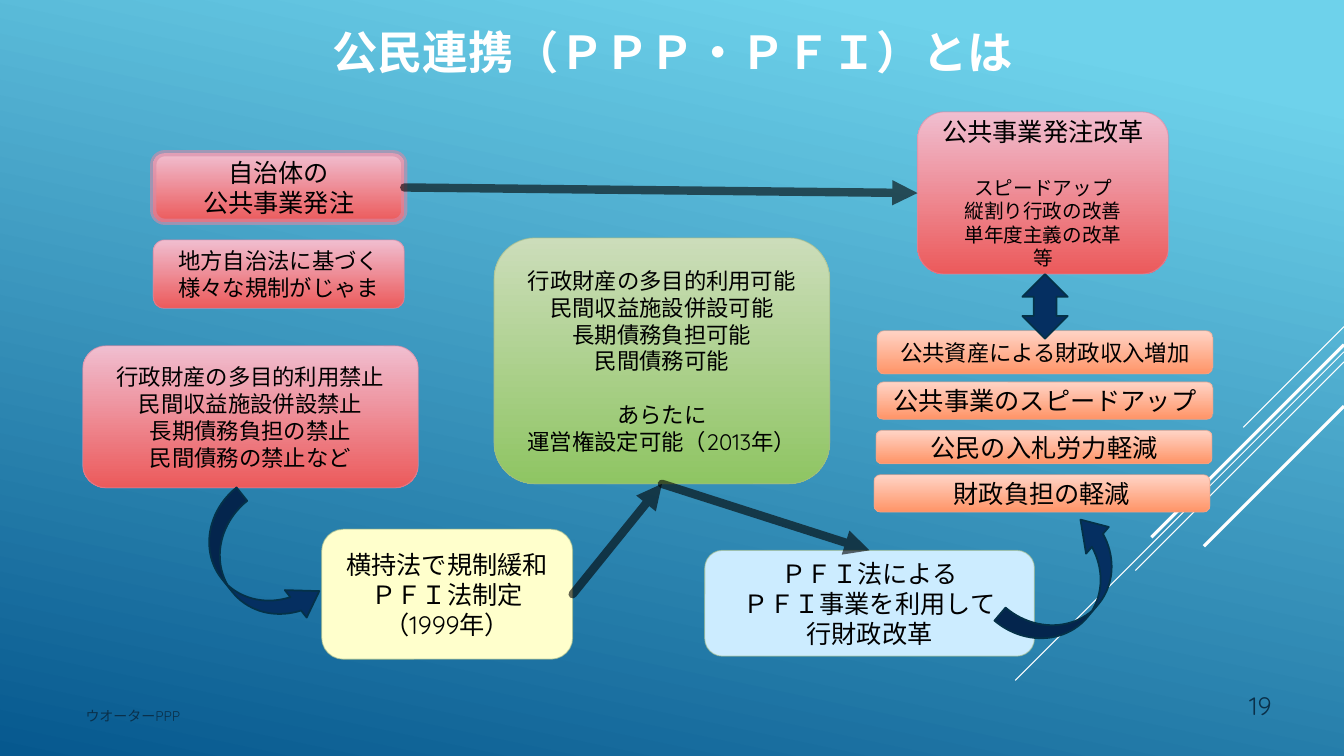
from pptx import Presentation
from pptx.dml.color import RGBColor
from pptx.enum.shapes import MSO_CONNECTOR, MSO_SHAPE
from pptx.enum.text import MSO_ANCHOR, PP_ALIGN
from pptx.oxml.ns import qn
from pptx.util import Inches, Pt
from lxml import etree

ROUND = MSO_SHAPE.ROUNDED_RECTANGLE
CURVE = MSO_SHAPE.CURVED_UP_ARROW
UPDOWN = MSO_SHAPE.UP_DOWN_ARROW
STRAIGHT = MSO_CONNECTOR.STRAIGHT
MIDDLE, TOP, BOTTOM = MSO_ANCHOR.MIDDLE, MSO_ANCHOR.TOP, MSO_ANCHOR.BOTTOM
LEFT, CENTER, RIGHT = PP_ALIGN.LEFT, PP_ALIGN.CENTER, PP_ALIGN.RIGHT

WHITE = RGBColor(0xFF, 0xFF, 0xFF)
BLACK = RGBColor(0, 0, 0)
NAVY = RGBColor(0x05, 0x2F, 0x61)
EDGE = RGBColor(0x04, 0x31, 0x48)
INK = RGBColor(0x0A, 0x30, 0x4A)
SKY = RGBColor(0x6E, 0xD2, 0xEB)
DEEP = RGBColor(0x06, 0x58, 0x8E)
SAGE = RGBColor(0xA4, 0xBB, 0x8B)

# Each look: fill colours (one, or two for a gradient), then the line colour
RED = ([RGBColor(0xF0, 0xBE, 0xD0), RGBColor(0xEC, 0x5A, 0x5B)], RGBColor(0xD6, 0x8B, 0xA6))
GREEN = ([RGBColor(0xCC, 0xDD, 0xBA), RGBColor(0x8F, 0xC5, 0x63)], SAGE)
PEACH = ([RGBColor(0xFF, 0xD4, 0xC6), RGBColor(0xFF, 0x94, 0x67)], RGBColor(0xEE, 0xA7, 0x8F))
CREAM = ([RGBColor(0xFF, 0xFF, 0xCC)], SAGE)
PALE = ([RGBColor(0xCC, 0xEC, 0xFF)], SAGE)


class Board:
    font = "Quicksand"

    def __init__(self, deck):
        self.slide = deck.slides.add_slide(deck.slide_layouts[5])
        self.shapes = self.slide.shapes

    def blend(self, fill, colors, angle, start=0):
        fill.gradient()
        fill.gradient_angle = angle
        for stop, color, pos in zip(fill.gradient_stops, colors, (start, 1)):
            stop.color.rgb = color
            stop.position = pos

    def fade(self, shape):
        """Make a shape's line 60 % opaque and return its XML."""
        pen = shape._element.spPr.find(qn("a:ln"))
        color = pen.find(".//" + qn("a:srgbClr"))
        etree.SubElement(color, qn("a:alpha")).set("val", "60000")
        return pen

    def style(self, frame, text, size, color=BLACK, align=CENTER, anchor=MIDDLE, bold=False):
        """Set a frame's text and format its runs."""
        frame.text = text
        frame.word_wrap = True
        frame.vertical_anchor = anchor
        for par in frame.paragraphs:
            par.alignment = align
            for run in par.runs:
                run.font.name = self.font
                run.font.size = Pt(size)
                run.font.color.rgb = color
                run.font.bold = bold

    def title(self, text, *area):
        head = self.shapes.title
        head.left, head.top, head.width, head.height = map(Inches, area)
        self.style(head.text_frame, text, 32.4, WHITE, bold=True)

    def label(self, text, area, size, align, anchor):
        box = self.shapes.add_textbox(*map(Inches, area))
        self.style(box.text_frame, text, size, INK, align, anchor)

    def box(self, text, area, look, size, width=0.75):
        card = self.shapes.add_shape(ROUND, *map(Inches, area))
        card.shadow.inherit = False
        colors, edge = look
        if len(colors) > 1:
            self.blend(card.fill, colors, 270)
        else:
            card.fill.solid()
            card.fill.fore_color.rgb = colors[0]
        card.line.color.rgb = edge
        card.line.width = Pt(width)
        self.fade(card)
        self.style(card.text_frame, text, size)
        return card

    def arrow(self, kind, area, bends, turn=0):
        mark = self.shapes.add_shape(kind, *map(Inches, area))
        mark.shadow.inherit = False
        mark.rotation = turn
        for i, bend in enumerate(bends):
            mark.adjustments[i] = bend
        mark.fill.solid()
        mark.fill.fore_color.rgb = NAVY
        mark.line.color.rgb = EDGE
        mark.line.width = Pt(1.25)

    def line(self, ends, color, width):
        link = self.shapes.add_connector(STRAIGHT, *map(Inches, ends))
        link.line.color.rgb = color
        link.line.width = Pt(width)
        etree.SubElement(link._element.spPr, qn("a:effectLst"))
        return link

    def join(self, start, side, goal, port):
        """Draw a thick arrow between the sides of two boxes."""
        link = self.line((0, 0, 1, 1), BLACK, 6)
        link.begin_connect(start, side)
        link.end_connect(goal, port)
        pen = self.fade(link)
        pen.set("cap", "rnd")
        etree.SubElement(pen, qn("a:tailEnd")).set("type", "triangle")


def main():
    deck = Presentation()
    deck.slide_width, deck.slide_height = Inches(13.33), Inches(7.5)
    board = Board(deck)
    board.blend(board.slide.background.fill, (SKY, DEEP), 258, 0.1)

    # Diagonal rays from the right edge: start height, run, width
    for top, run, width in ((3.24, 1, 0.75), (3.49, 3.26, 0.75), (3.59, 2.07, 0.75),
                            (3.42, 1.91, 2.25), (4.03, 1.39, 2.25)):
        board.line((13.33, top, 13.33 - run, top + run), WHITE, width)

    board.title("公民連携（ＰＰＰ・ＰＦＩ）とは", 2.31, 0.21, 8.72, 0.6)

    order = board.box("自治体の\n公共事業発注", (1.52, 1.52, 2.49, 0.68), RED, 18, 4.5)
    board.box("地方自治法に基づく\n様々な規制がじゃま", (1.52, 2.38, 2.49, 0.68), RED, 16)
    board.box("行政財産の多目的利用禁止\n民間収益施設併設禁止\n長期債務負担の禁止\n民間債務の禁止など",
              (0.82, 3.43, 3.33, 1.41), RED, 16)
    law = board.box("横持法で規制緩和\nＰＦＩ法制定\n（1999年）", (3.19, 5.25, 2.49, 1.29), CREAM, 18)
    gain = board.box("行政財産の多目的利用可能\n民間収益施設併設可能\n長期債務負担可能\n民間債務可能\n"
                     "あらたに\n運営権設定可能（2013年）", (4.9, 2.36, 3.33, 2.44), GREEN, 16)
    gain.text_frame.paragraphs[4].space_before = Pt(19)
    plan = board.box("ＰＦＩ法による\nＰＦＩ事業を利用して\n行財政改革", (6.99, 5.46, 3.27, 1.05), PALE, 18)

    for text, left, top, height, size in (
            ("財政負担の軽減", 8.67, 4.71, 0.37, 18),
            ("公民の入札労力軽減", 8.69, 4.27, 0.33, 18),
            ("公共事業のスピードアップ", 8.7, 3.79, 0.37, 18),
            ("公共資産による財政収入増加", 8.7, 3.28, 0.43, 16)):
        board.box(text, (left, top, 3.33, height), PEACH, size)

    goal = board.box("公共事業発注改革\nスピードアップ\n縦割り行政の改善\n単年度主義の改革\n等",
                     (9.1, 1.11, 2.49, 1.61), RED, 14)
    pars = goal.text_frame.paragraphs
    pars[0].runs[0].font.size = Pt(18)
    pars[1].space_before = Pt(21)

    board.join(law, 3, gain, 2)
    board.join(gain, 2, plan, 0)
    board.join(order, 3, goal, 1)
    for left, top, turn in ((1.8, 5.29, 51.4), (9.86, 5.47, 310.4)):
        board.arrow(CURVE, (left, top, 1.49, 0.68), (0.25, 0.512, 0.385), turn)
    board.arrow(UPDOWN, (10.14, 2.72, 0.45, 0.64), (0.304, 0.5))

    board.label("ウオーターPPP", (0.75, 6.97, 8.25, 0.4), 10, LEFT, TOP)
    board.label("19", (11.46, 6.47, 1.25, 0.73), 18, RIGHT, BOTTOM)
    deck.save("out.pptx")


if __name__ == "__main__":
    main()
